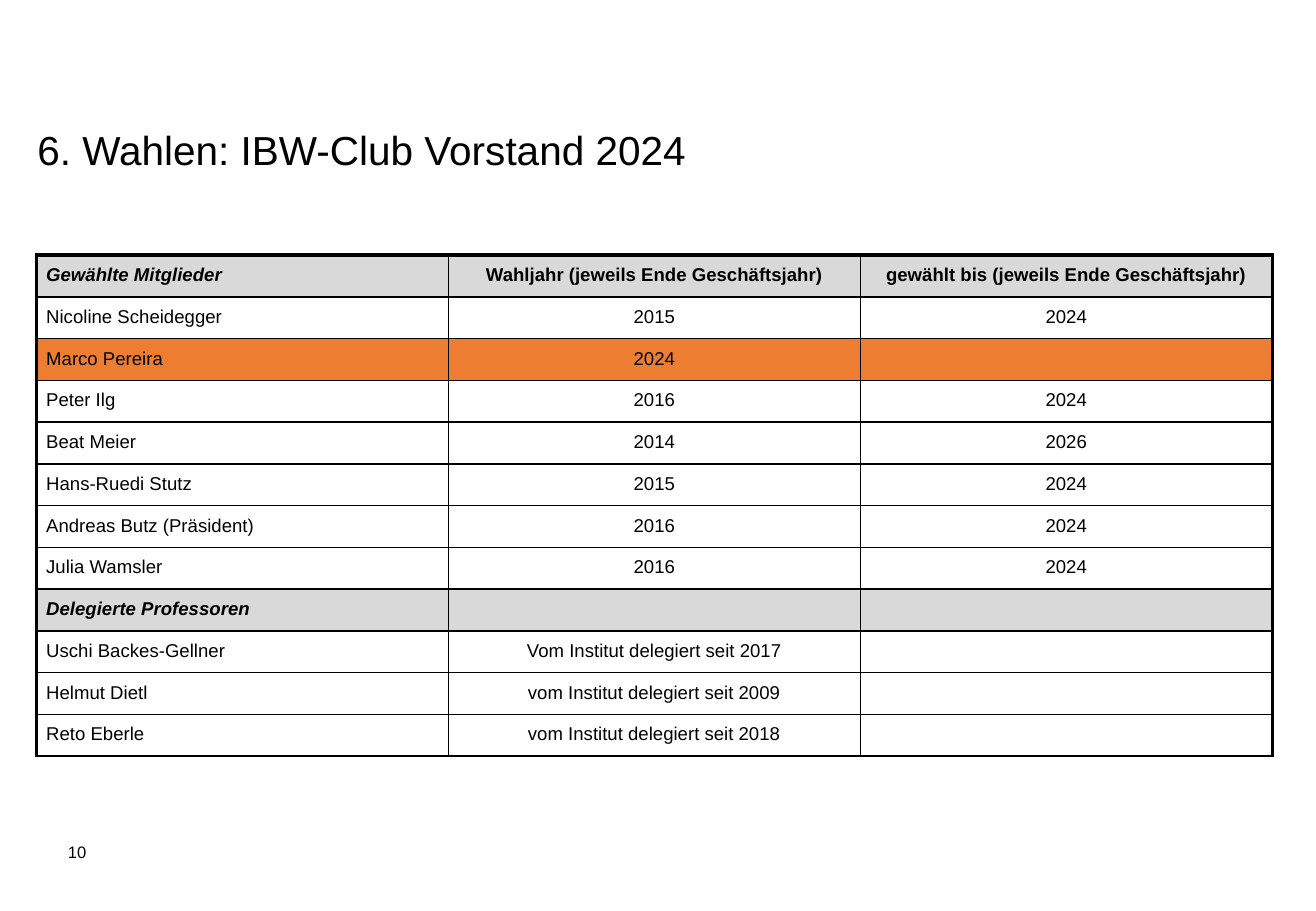
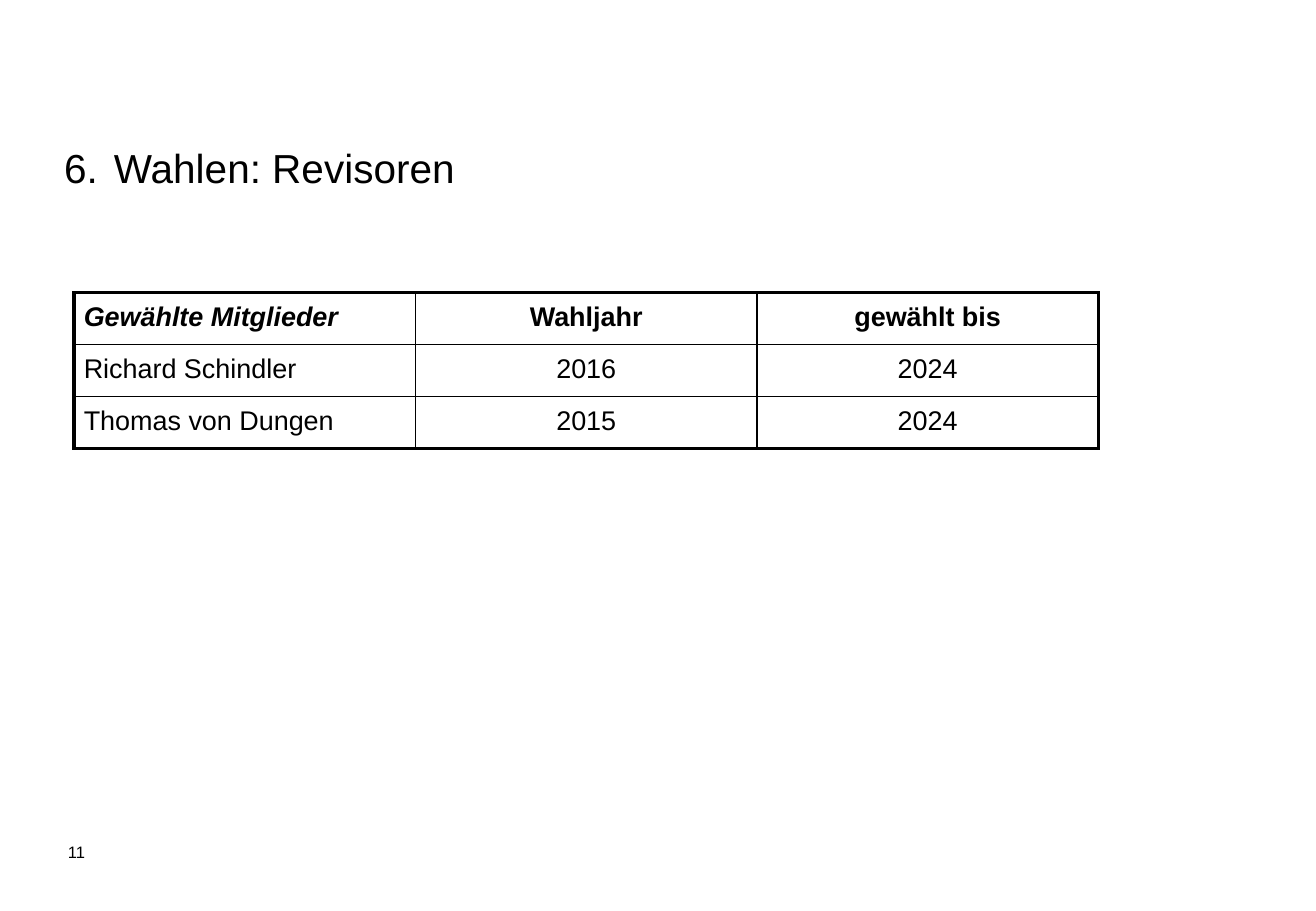
from dataclasses import dataclass
from typing import Any

from lxml.etree import SubElement
from pptx import Presentation
from pptx.dml.color import RGBColor
from pptx.enum.text import MSO_ANCHOR as Anchor, PP_ALIGN as Align
from pptx.oxml.ns import qn
from pptx.slide import Slide
from pptx.table import _Cell as Cell
from pptx.util import Inches, Length, Pt

BLACK = RGBColor(0x00, 0x00, 0x00)
WHITE = RGBColor(0xFF, 0xFF, 0xFF)
GREY = RGBColor(0xD9, 0xD9, 0xD9)
ORANGE = RGBColor(0xED, 0x7D, 0x31)
FONT = "Arial"
THIN, THICK = Pt(1), Pt(2.25)
HANGING = Inches(0.41)
MARGINS = dict.fromkeys(
    ("margin_left", "margin_top", "margin_right", "margin_bottom"), Inches(0.08)
)


@dataclass(frozen=True)
class Row:
    texts: tuple[str, str, str]
    fill: RGBColor = WHITE
    heading: bool = False


@dataclass(frozen=True)
class Election:
    title: str
    title_left: float
    title_top: float
    title_width: float
    left: float
    top: float
    column_width: float
    row_height: float
    size: float
    bottom_line: Length
    rows: tuple[Row, ...]


BOARD = Election(
    "6. Wahlen: IBW-Club Vorstand 2024", 0.21, 0.84, 10.33,
    0.3, 2.1, 3.39, 0.34, 11, THIN,
    (
        Row(("Gewählte Mitglieder", "Wahljahr (jeweils Ende Geschäftsjahr)",
             "gewählt bis (jeweils Ende Geschäftsjahr)"), GREY, True),
        Row(("Nicoline Scheidegger", "2015", "2024")),
        Row(("Marco Pereira", "2024", ""), ORANGE),
        Row(("Peter Ilg", "2016", "2024")),
        Row(("Beat Meier", "2014", "2026")),
        Row(("Hans-Ruedi Stutz", "2015", "2024")),
        Row(("Andreas Butz (Präsident)", "2016", "2024")),
        Row(("Julia Wamsler", "2016", "2024")),
        Row(("Delegierte Professoren", "", ""), GREY, True),
        Row(("Uschi Backes-Gellner", "Vom Institut delegiert seit 2017", "")),
        Row(("Helmut Dietl", "vom Institut delegiert seit 2009", "")),
        Row(("Reto Eberle", "vom Institut delegiert seit 2018", "")),
    ),
)
AUDITORS = Election(
    "6. \tWahlen: Revisoren", 0.43, 0.99, 9.4,
    0.61, 2.41, 2.81, 0.42, 16, THICK,
    (
        Row(("Gewählte Mitglieder", "Wahljahr", "gewählt bis"), heading=True),
        Row(("Richard Schindler", "2016", "2024")),
        Row(("Thomas von Dungen", "2015", "2024")),
    ),
)


def apply(target: Any, values: dict[str, Any]) -> None:
    for name, value in values.items():
        setattr(target, name, value)


def write(paragraph: Any, text: str, size: float, **style: bool) -> None:
    if not text:
        SubElement(paragraph._p, qn("a:endParaRPr"), sz=str(int(size * 100)))
        return
    run = paragraph.add_run()
    run.text = text
    apply(run.font, {"name": FONT, "size": Pt(size), **style})
    run.font.color.rgb = BLACK


def add_text(slide: Slide, text: str, size: float, left: float, top: float,
             width: float, height: float) -> Any:
    frame = slide.shapes.add_textbox(
        Inches(left), Inches(top), Inches(width), Inches(height)
    ).text_frame
    apply(frame, {"word_wrap": True, "vertical_anchor": Anchor.MIDDLE})
    write(frame.paragraphs[0], text, size)
    return frame.paragraphs[0]


def add_title(slide: Slide, election: Election) -> None:
    title = add_text(slide, election.title, 24, election.title_left,
                     election.title_top, election.title_width, 0.83)
    title.line_spacing = 0.9
    properties = title._p.get_or_add_pPr()
    properties.set("marL", str(HANGING))
    properties.set("indent", str(-HANGING))


def set_borders(cell: Cell, widths: dict[str, Length]) -> None:
    for side, width in widths.items():
        line = SubElement(cell._tc.get_or_add_tcPr(), qn(f"a:ln{side}"), w=str(width))
        SubElement(SubElement(line, qn("a:solidFill")), qn("a:srgbClr"), val=str(BLACK))


def add_election_table(slide: Slide, election: Election) -> None:
    rows = election.rows
    columns = len(rows[0].texts)
    table = slide.shapes.add_table(
        len(rows), columns, Inches(election.left), Inches(election.top),
        Inches(election.column_width * columns), Inches(election.row_height * len(rows)),
    ).table
    apply(table, {"first_row": False, "horz_banding": False})
    for column in table.columns:
        column.width = Inches(election.column_width)
    for i, row in enumerate(rows):
        table.rows[i].height = Inches(election.row_height)
        for j, text in enumerate(row.texts):
            cell = table.cell(i, j)
            apply(cell, MARGINS)
            set_borders(cell, {
                "L": THICK if j == 0 else THIN,
                "R": THICK if j == columns - 1 else THIN,
                "T": THICK if i == 0 else THIN,
                "B": election.bottom_line if i == len(rows) - 1 else THIN,
            })
            cell.fill.solid()
            cell.fill.fore_color.rgb = row.fill
            paragraph = cell.text_frame.paragraphs[0]
            paragraph.alignment = Align.CENTER if j else Align.LEFT
            write(paragraph, text, election.size, bold=row.heading,
                  italic=row.heading and j == 0)


def main() -> None:
    deck = Presentation()
    apply(deck, {"slide_width": Inches(10.83), "slide_height": Inches(7.5)})
    for number, election in enumerate((BOARD, AUDITORS), start=10):
        slide = deck.slides.add_slide(deck.slide_layouts[6])
        add_text(slide, str(number), 9.8, 0.46, 6.81, 2.44, 0.4)
        add_title(slide, election)
        add_election_table(slide, election)
    deck.save("out.pptx")


if __name__ == "__main__":
    main()
